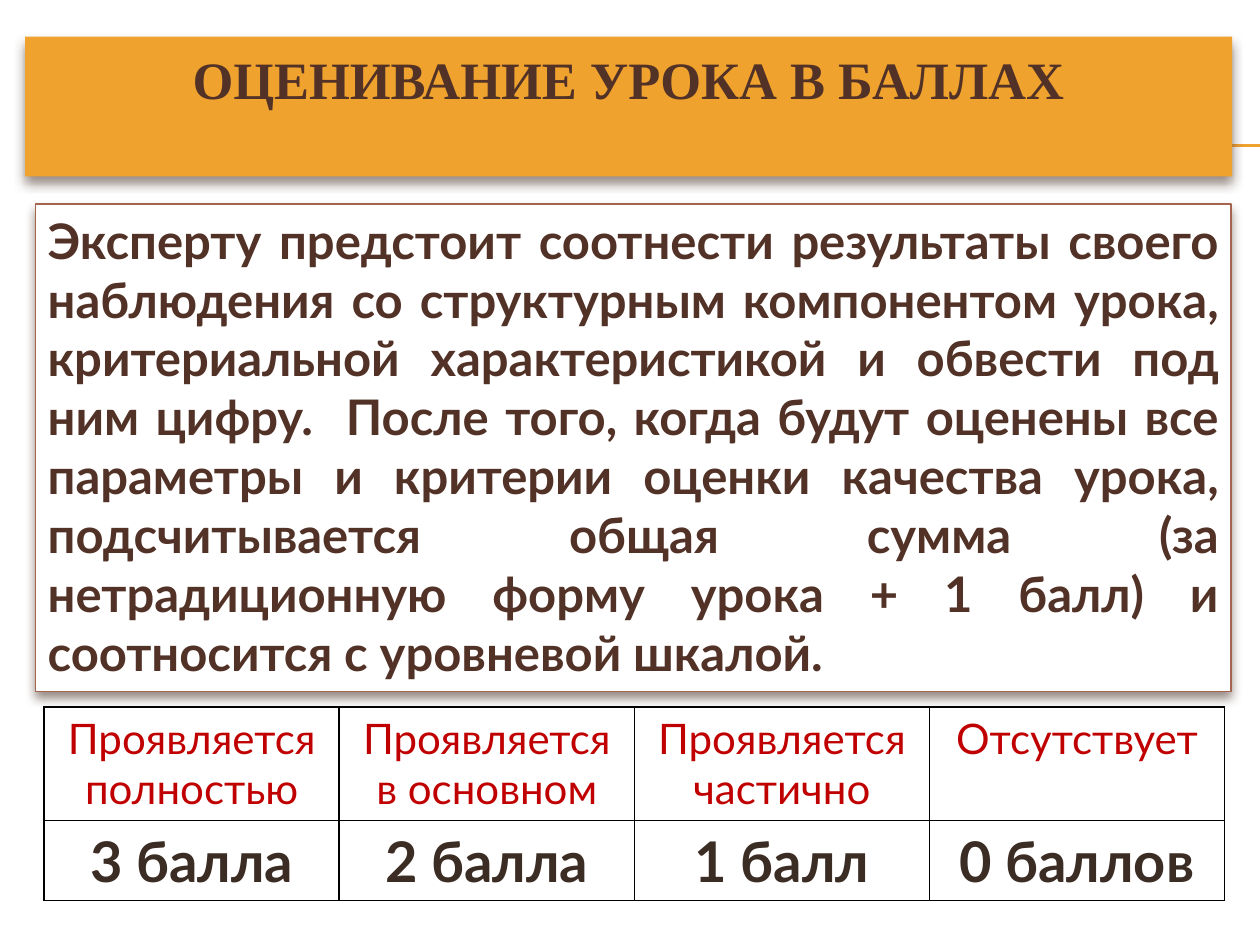
from lxml import etree
from pptx import Presentation
from pptx.dml.color import RGBColor
from pptx.enum.shapes import MSO_CONNECTOR, MSO_SHAPE
from pptx.enum.text import MSO_ANCHOR, PP_ALIGN
from pptx.oxml import parse_xml
from pptx.oxml.ns import nsdecls, qn
from pptx.util import Inches, Pt

ORANGE, BROWN, RUST, WHITE = "F0A22E", "523227", "A5644E", "FFFFFF"
RED, DARK, BLACK, SHADOW = "C00000", "3B2C24", "000000", "4E3B30"

INSTRUCTION = (
    "Эксперту предстоит соотнести результаты своего наблюдения со структурным "
    "компонентом урока, критериальной характеристикой и обвести под ним цифру.  "
    "После того, когда будут оценены все параметры и критерии оценки качества "
    "урока, подсчитывается общая сумма (за нетрадиционную форму урока + 1 балл) "
    "и соотносится с уровневой шкалой."
)
SCALE = [
    ("Проявляется полностью", "3 балла"),
    ("Проявляется в основном", "2 балла"),
    ("Проявляется частично", "1 балл"),
    ("Отсутствует", "0 баллов"),
]


def color(hex_string):
    return RGBColor.from_string(hex_string)


class SlideBuilder:
    font = "Lato"

    def __init__(self, slide):
        self.slide = slide

    def add_text(self, frame, text, size, hex_color, bold=True,
                 align=PP_ALIGN.CENTER, font=None):
        paragraph = frame.paragraphs[0]
        paragraph.alignment = align
        run = paragraph.add_run()
        run.text = text
        run.font.name = font or self.font
        run.font.size = Pt(size)
        run.font.bold = bold
        run.font.color.rgb = color(hex_color)

    def rule(self, left, right, y):
        line = self.slide.shapes.add_connector(
            MSO_CONNECTOR.STRAIGHT, Inches(left), Inches(y), Inches(right), Inches(y))
        line.line.color.rgb = color(ORANGE)
        line.line.width = Pt(0.75)
        etree.SubElement(line._element.spPr, qn("a:effectLst"))

    def panel(self, left, top, width, height, fill, outline=None, inset=0.05):
        """Add a rectangle with a soft shadow and return its text frame."""
        shape = self.slide.shapes.add_shape(
            MSO_SHAPE.RECTANGLE, Inches(left), Inches(top), Inches(width), Inches(height))
        shape.fill.solid()
        shape.fill.fore_color.rgb = color(fill)
        if outline:
            shape.line.color.rgb = color(outline)
            shape.line.width = Pt(0.79)
        else:
            shape.line.fill.background()
        shape._element.spPr.append(parse_xml(
            f'<a:effectLst {nsdecls("a")}><a:outerShdw blurRad="{Pt(6)}" '
            f'dist="{Pt(4)}" dir="5400000" rotWithShape="0"><a:srgbClr val="{SHADOW}">'
            '<a:alpha val="60000"/></a:srgbClr></a:outerShdw></a:effectLst>'))
        frame = shape.text_frame
        frame.word_wrap = True
        frame.vertical_anchor = MSO_ANCHOR.TOP
        frame.margin_top = Inches(inset)
        return frame

    def border(self, cell):
        properties = cell._tc.get_or_add_tcPr()
        for index, side in enumerate(("lnL", "lnR", "lnT", "lnB")):
            properties.insert(index, parse_xml(
                f'<a:{side} {nsdecls("a")} w="{Pt(1)}"><a:solidFill>'
                f'<a:srgbClr val="{BLACK}"/></a:solidFill></a:{side}>'))

    def score_table(self, left, top, width, row_heights, scale):
        """Add a table with one column per level: its label above its score."""
        table = self.slide.shapes.add_table(
            len(row_heights), len(scale), Inches(left), Inches(top),
            Inches(width), Inches(sum(row_heights))).table
        for row, height in zip(table.rows, row_heights):
            row.height = Inches(height)
        styles = [(24, RED, False), (32, DARK, True)]
        for column, texts in enumerate(scale):
            for row, (text, style) in enumerate(zip(texts, styles)):
                cell = table.cell(row, column)
                cell.fill.solid()
                cell.fill.fore_color.rgb = color(WHITE)
                self.border(cell)
                self.add_text(cell.text_frame, text, *style)


def main():
    presentation = Presentation()
    presentation.slide_width = Inches(10)
    presentation.slide_height = Inches(7.5)
    builder = SlideBuilder(presentation.slides.add_slide(presentation.slide_layouts[6]))

    for y in (1.15, 1.16):
        builder.rule(0.56, 10, y)
    title = builder.panel(0.2, 0.29, 9.58, 1.11, ORANGE, inset=0.08)
    builder.add_text(title, "ОЦЕНИВАНИЕ УРОКА В БАЛЛАХ", 30, BROWN, font="Times New Roman")
    body = builder.panel(0.28, 1.62, 9.49, 3.87, WHITE, RUST)
    builder.add_text(body, INSTRUCTION, 28, BROWN, align=PP_ALIGN.JUSTIFY)
    builder.score_table(0.35, 5.61, 9.37, (0.9, 0.63), SCALE)

    presentation.save("out.pptx")


if __name__ == "__main__":
    main()
